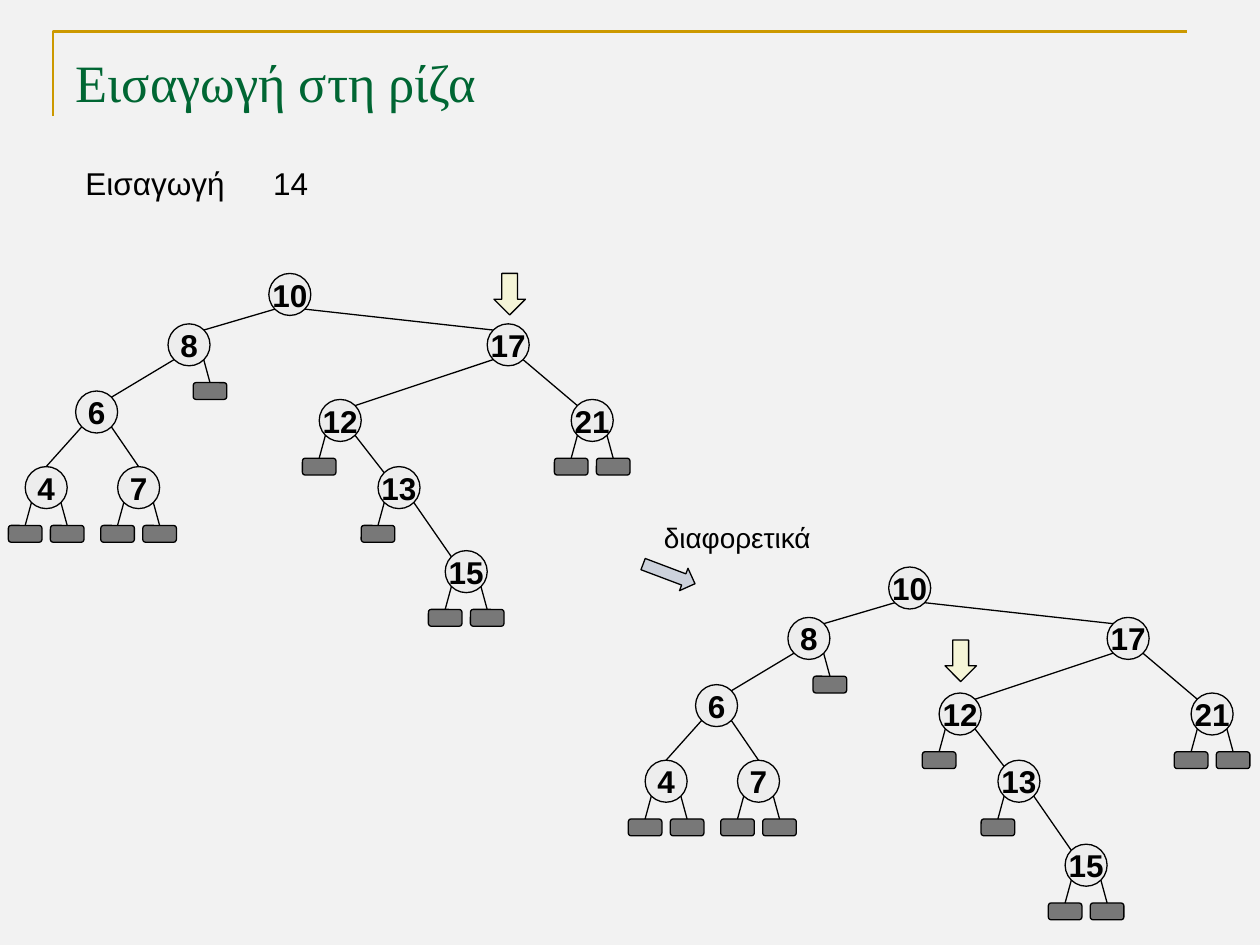
import pptx
import pptx.util
import pptx.dml.color
import pptx.enum.shapes
import pptx.enum.text
import pptx.oxml.ns
import lxml.etree

COLORS = {
    "page": "F2F2F2",
    "frame": "CC9900",
    "title": "006633",
    "ink": "000000",
    "node": "EAEAEA",
    "pointer": "FFFF99",
    "step": "002060",
}
UNIT = 1 / 15
NODE = 5
LEAF_WIDTH, LEAF_HEIGHT = 4, 2
NEAR, FAR = 0.75, 4.25
LEAF_DROP = 7
LEAF_SHIFTS = (-2, 3)
LEAF = "leaf"
SHAPES = pptx.enum.shapes.MSO_SHAPE

TREE = ("10", 32, 0,
        ("8", 20, 6,
         ("6", 9, 14,
          ("4", 3, 23, LEAF, LEAF),
          ("7", 14, 23, LEAF, LEAF)),
         LEAF),
        ("17", 58, 6,
         ("12", 38, 15,
          LEAF,
          ("13", 45, 23,
           LEAF,
           ("15", 53, 33, LEAF, LEAF))),
         ("21", 68, 15, LEAF, LEAF)))
MISSING_LEAVES = {("8", 1)}
TOP_JOINED = {"4", "7"}


def inches(*lengths):
    return [pptx.util.Inches(length) for length in lengths]


def rgb(name):
    return pptx.dml.color.RGBColor.from_string(COLORS[name])


def format_paragraph(para, text, size, color="ink", font="Arial", bold=False):
    para.text = text
    para.font.size = pptx.util.Pt(size)
    para.font.name = font
    para.font.bold = bold
    para.font.color.rgb = rgb(color)


def set_line(line, color="ink", width=0.75):
    line.color.rgb = rgb(color)
    line.width = pptx.util.Pt(width)


def add_figure(shapes, kind, place, color, opacity):
    figure = shapes.add_shape(kind, *inches(*place))
    figure.shadow.inherit = False
    figure.fill.solid()
    figure.fill.fore_color.rgb = rgb(color)
    tint = figure.fill._xPr.find(".//" + pptx.oxml.ns.qn("a:srgbClr"))
    alpha = lxml.etree.SubElement(tint, pptx.oxml.ns.qn("a:alpha"))
    alpha.set("val", str(opacity * 1000))
    set_line(figure.line)
    return figure


def add_edge(shapes, start, end):
    edge = shapes.add_connector(pptx.enum.shapes.MSO_CONNECTOR.STRAIGHT, *inches(*start, *end))
    set_line(edge.line)
    properties = edge._element.spPr
    lxml.etree.SubElement(properties, pptx.oxml.ns.qn("a:effectLst"))
    return edge


def add_node(shapes, place, key):
    node = add_figure(shapes, SHAPES.OVAL, place, "node", 60)
    frame = node.text_frame
    frame.word_wrap = False
    frame.margin_left = frame.margin_right = frame.margin_top = frame.margin_bottom = 0
    frame.vertical_anchor = pptx.enum.text.MSO_ANCHOR.MIDDLE
    para = frame.paragraphs[0]
    para.alignment = pptx.enum.text.PP_ALIGN.CENTER
    format_paragraph(para, key, 18, bold=True)
    return node


def add_tree(shapes, origin, tree):
    def at(column, row):
        return origin[0] + column * UNIT, origin[1] + row * UNIT

    key, column, row, *children = tree
    add_node(shapes, (*at(column, row), NODE * UNIT, NODE * UNIT), key)
    for side, child in enumerate(children):
        foot = at(column + (NEAR, FAR)[side], row + FAR)
        if child == LEAF:
            corner = at(column + LEAF_SHIFTS[side], row + LEAF_DROP)
            leaf = add_figure(shapes, SHAPES.ROUNDED_RECTANGLE,
                              (*corner, LEAF_WIDTH * UNIT, LEAF_HEIGHT * UNIT), "ink", 50)
            edge = add_edge(shapes, corner, foot)
            edge.begin_connect(leaf, 0)
            continue
        child_key, child_column, child_row = child[:3]
        if child_key in TOP_JOINED:
            head = at(child_column + NODE / 2, child_row)
        else:
            head = at(child_column + (FAR, NEAR)[side], child_row + NEAR)
        add_edge(shapes, head, foot)
        add_tree(shapes, origin, child)


def add_label(slide, place, text, size):
    box = slide.shapes.add_textbox(*inches(*place))
    box.text_frame.word_wrap = False
    format_paragraph(box.text_frame.paragraphs[0], text, size)


def add_frame(slide):
    builder = slide.shapes.build_freeform(*inches(0.42, 0.92))
    builder.add_line_segments([inches(0.42, 0.25), inches(9.42, 0.25)], close=False)
    frame = builder.convert_to_shape()
    frame.shadow.inherit = False
    frame.fill.background()
    set_line(frame.line, "frame", 1.5)


def set_title(slide, text):
    title = slide.shapes.title
    title.left, title.top, title.width, title.height = inches(0.5, 0.3, 9, 0.53)
    frame = title.text_frame
    frame.vertical_anchor = pptx.enum.text.MSO_ANCHOR.TOP
    frame.margin_top, frame.margin_bottom = inches(0.1, 0)
    para = frame.paragraphs[0]
    para.alignment = pptx.enum.text.PP_ALIGN.LEFT
    format_paragraph(para, text, 30, "title", "Times New Roman")


def main():
    deck = pptx.Presentation()
    deck.slide_width, deck.slide_height = inches(10, 7.5)
    slide = deck.slides.add_slide(deck.slide_layouts[5])
    slide.background.fill.solid()
    slide.background.fill.fore_color.rgb = rgb("page")
    add_frame(slide)
    set_title(slide, "Εισαγωγή στη ρίζα")
    add_label(slide, (0.58, 1.25, 1.42, 0.5), "Εισαγωγή", 18)
    add_label(slide, (2.07, 1.25, 0.48, 0.4), "14", 18)
    for origin in ((0, 2.17), (4.92, 4.5)):
        add_tree(slide.shapes.add_group_shape().shapes, origin, TREE)
    step = add_figure(slide.shapes, SHAPES.RIGHT_ARROW, (5.09, 4.46, 0.44, 0.19), "step", 15)
    step.rotation = 20.7
    add_label(slide, (5.17, 4.08, 1.38, 0.37), "διαφορετικά", 16)
    for corner in ((3.92, 2.17), (7.5, 5.08)):
        add_figure(slide.shapes, SHAPES.DOWN_ARROW, (*corner, 0.25, 0.33), "pointer", 30)
    deck.save("out.pptx")


if __name__ == "__main__":
    main()
